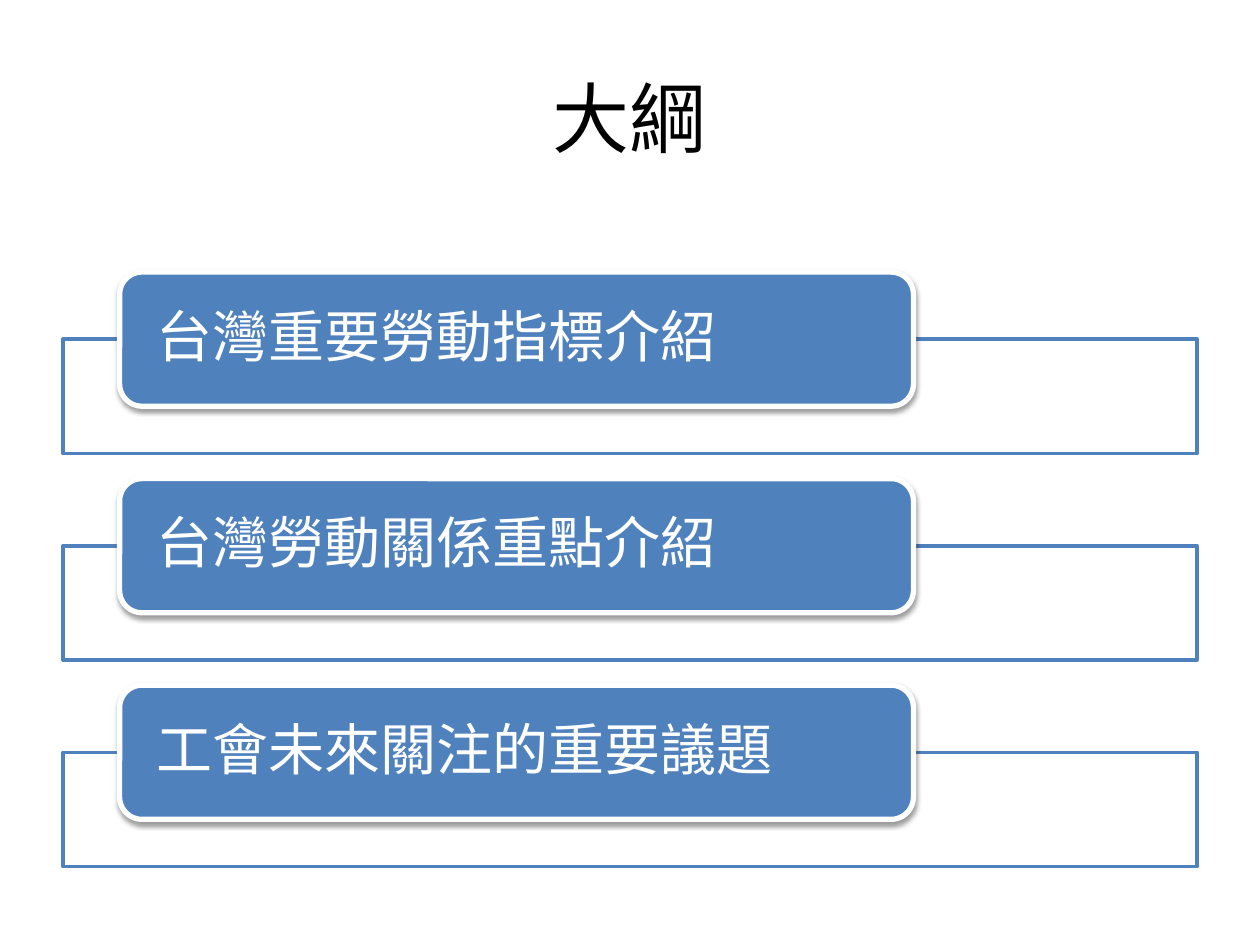
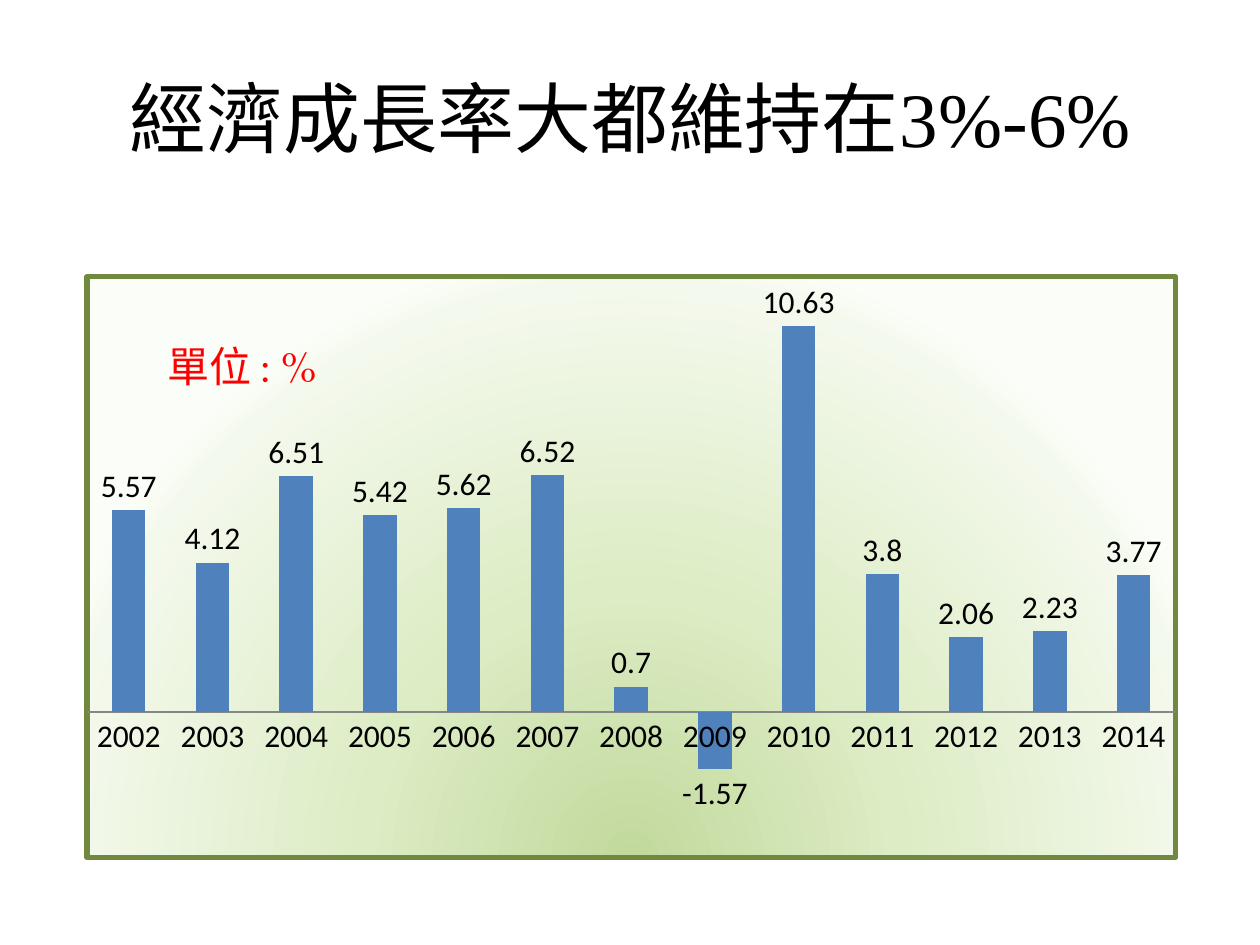
from dataclasses import dataclass

from pptx import Presentation
from pptx import util as u
from pptx.chart import data as cd
from pptx.dml.color import RGBColor
from pptx.enum import chart as ce, shapes, text
from pptx.oxml import parse_xml
from pptx.oxml.ns import nsdecls, qn


@dataclass(frozen=True)
class Theme:
    """Colours, fonts and type sizes of the deck."""
    blue: str = "4F81BD"
    white: str = "FFFFFF"
    black: str = "000000"
    red: str = "FF0000"
    olive: str = "71893F"
    grey: str = "868686"
    glow: tuple = ((0, "C2D99D"), (43, "DCECC4"), (93, "F4F9ED"), (100, "FBFEF8"))
    sans: str = "Calibri"
    card: str = "Arial"
    serif: str = "Times New Roman"
    book: str = "TeX Gyre Pagella"
    head: int = 44
    item: int = 32
    unit: int = 24
    label: int = 18


@dataclass(frozen=True)
class Box:
    """A rectangle in inches."""
    x: float
    y: float
    w: float
    h: float

    def inner(self, x, y, w, h):
        """Return an inner box given as shares of this one."""
        return Box(self.x + x * self.w, self.y + y * self.h, w * self.w, h * self.h)

    def emu(self):
        """Return left, top, width and height as lengths."""
        return [u.Inches(v) for v in (self.x, self.y, self.w, self.h)]


T = Theme()
PAGE = Box(0, 0, 10, 7.5)
HEAD = PAGE.inner(0.05, 0.04, 0.9, 1 / 6)
STACK = PAGE.inner(0.05, 0.288, 0.9, 0.629)
PLOT = PAGE.inner(0.051, 0.28, 0.9, 0.64)

TOPICS = ["台灣重要勞動指標介紹", "台灣勞動關係重點介紹", "工會未來關注的重要議題"]
YEARS = [str(year) for year in range(2002, 2015)]
GROWTH = [5.57, 4.12, 6.51, 5.42, 5.62, 6.52, 0.7, -1.57, 10.63, 3.8, 2.06, 2.23, 3.77]


def rgb(color):
    """Turn a hex string into a colour."""
    return RGBColor.from_string(color)


def style(font, name=T.sans, size=T.label, color=T.black):
    """Set the face, size and colour of a font."""
    font.name, font.size = name, u.Pt(size)
    font.color.rgb = rgb(color)


def write(frame, words, align=None, line=None, after=None, **look):
    """Add a run to the first paragraph of a text frame."""
    para = frame.paragraphs[0]
    if align is not None:
        para.alignment = align
    if line is not None:
        para.line_spacing = line
    if after is not None:
        para.space_after = u.Pt(after)
    run = para.add_run()
    run.text = words
    style(run.font, **look)


def panel(slide, kind, box, fill, edge, width):
    """Add a filled and outlined shape without a shadow."""
    shape = slide.shapes.add_shape(kind, *box.emu())
    shape.shadow.inherit = False
    shape.fill.solid()
    shape.fill.fore_color.rgb = rgb(fill)
    shape.line.color.rgb = rgb(edge)
    shape.line.width = u.Pt(width)
    return shape


def fade(shape, share):
    """Set the opacity of a solid fill in percent."""
    tint = shape._element.spPr.find(qn("a:solidFill"))[0]
    tint.append(parse_xml(f'<a:alpha {nsdecls("a")} val="{share * 1000}"/>'))


def shade(shape):
    """Give a shape a soft shadow below it."""
    shape._element.spPr.find(qn("a:effectLst")).append(parse_xml(
        f'<a:outerShdw {nsdecls("a")} blurRad="{u.Pt(3.1)}" dist="{u.Pt(1.6)}" '
        f'dir="5400000" rotWithShape="0"><a:srgbClr val="{T.black}">'
        '<a:alpha val="38000"/></a:srgbClr></a:outerShdw>'))


def title(slide, box, *pairs):
    """Fill the title from pairs of words and font."""
    head = slide.shapes.title
    head.left, head.top, head.width, head.height = box.emu()
    head.text_frame.vertical_anchor = text.MSO_ANCHOR.MIDDLE
    for words, name in pairs:
        write(head.text_frame, words, align=text.PP_ALIGN.CENTER, name=name, size=T.head)


def topic(slide, box, words):
    """Place a frame with a rounded card over its top edge."""
    frame = panel(slide, shapes.MSO_SHAPE.RECTANGLE,
                  box.inner(0, 0.37, 1, 0.63), T.white, T.blue, 2)
    fade(frame, 90)
    card = panel(slide, shapes.MSO_SHAPE.ROUNDED_RECTANGLE,
                 box.inner(0.05, 0, 0.7, 0.74), T.blue, T.white, 3)
    shade(card)
    body = card.text_frame
    body.word_wrap = True
    body.vertical_anchor = text.MSO_ANCHOR.MIDDLE
    body.margin_left = body.margin_right = u.Inches(0.24)
    body.margin_top = body.margin_bottom = 0
    write(body, words, align=text.PP_ALIGN.LEFT, line=0.9, after=11,
          name=T.card, size=T.item, color=T.white)


def stack(slide, box, topics):
    """Stack topics at an even pitch, the last one ending the box."""
    tall = 0.305
    pitch = (1 - tall) / (len(topics) - 1)
    for row, words in enumerate(topics):
        topic(slide, box.inner(0, row * pitch, 1, tall), words)


def backdrop(chart):
    """Fix the plot area and give it a radial fill and border."""
    area = chart._chartSpace.chart.plotArea
    for old in area.findall(qn("c:layout")):
        area.remove(old)
    spots = "".join(f'<c:{key} val="{val}"/>' for key, val in
                    (("x", 0.02), ("y", 0.02), ("w", 0.96), ("h", 0.96)))
    area.insert(0, parse_xml(
        f'<c:layout {nsdecls("c")}><c:manualLayout><c:layoutTarget val="inner"/>'
        f'<c:xMode val="edge"/><c:yMode val="edge"/>{spots}</c:manualLayout></c:layout>'))
    stops = "".join(f'<a:gs pos="{at * 1000}"><a:srgbClr val="{tone}"/></a:gs>'
                    for at, tone in T.glow)
    area.append(parse_xml(
        f'<c:spPr {nsdecls("c", "a")}><a:gradFill><a:gsLst>{stops}</a:gsLst>'
        '<a:path path="circle"><a:fillToRect l="50000" t="130000" r="50000" b="-30000"/>'
        f'</a:path></a:gradFill><a:ln w="{u.Pt(3)}"><a:solidFill>'
        f'<a:srgbClr val="{T.olive}"/></a:solidFill></a:ln></c:spPr>'))


def columns(slide, box, cats, vals):
    """Draw labelled columns around a zero line."""
    data = cd.CategoryChartData()
    data.categories = cats
    data.add_series("Series 1", vals)
    chart = slide.shapes.add_chart(
        ce.XL_CHART_TYPE.COLUMN_CLUSTERED, *box.emu(), data).chart
    chart.has_legend = chart.has_title = False
    style(chart.font)
    axis = chart.category_axis
    axis.major_tick_mark = axis.minor_tick_mark = ce.XL_TICK_MARK.NONE
    axis.has_major_gridlines = False
    axis.format.line.color.rgb = rgb(T.grey)
    scale = chart.value_axis
    scale.minimum_scale, scale.maximum_scale = -4, 12
    scale.has_major_gridlines = scale.visible = False
    plot = chart.plots[0]
    plot.gap_width, plot.vary_by_categories = 150, False
    bars = plot.series[0]
    bars.invert_if_negative = False
    bars.format.fill.solid()
    bars.format.fill.fore_color.rgb = rgb(T.blue)
    plot.has_data_labels = True
    plot.data_labels.show_value = True
    plot.data_labels.position = ce.XL_LABEL_POSITION.OUTSIDE_END
    style(plot.data_labels.font)
    backdrop(chart)


def note(slide, box, words):
    """Add the unit note over the chart."""
    body = slide.shapes.add_textbox(*box.emu()).text_frame
    body.word_wrap = True
    body.auto_size = text.MSO_AUTO_SIZE.SHAPE_TO_FIT_TEXT
    write(body, words, name=T.book, size=T.unit, color=T.red)


def outline(slide):
    """Build the outline slide."""
    title(slide, HEAD, ("大綱", T.sans))
    stack(slide, STACK, TOPICS)


def growth(slide):
    """Build the growth rate slide."""
    title(slide, HEAD, ("經濟成長率大都維持在", T.sans), ("3%-6%", T.serif))
    columns(slide, PLOT, YEARS, GROWTH)
    note(slide, PLOT.inner(0.08, 0.115, 0.23, 0.106), "單位 : %")


def main():
    """Build and save the deck."""
    deck = Presentation()
    deck.slide_width, deck.slide_height = PAGE.emu()[2:]
    for build in (outline, growth):
        build(deck.slides.add_slide(deck.slide_layouts[5]))
    deck.save("out.pptx")


if __name__ == "__main__":
    main()
